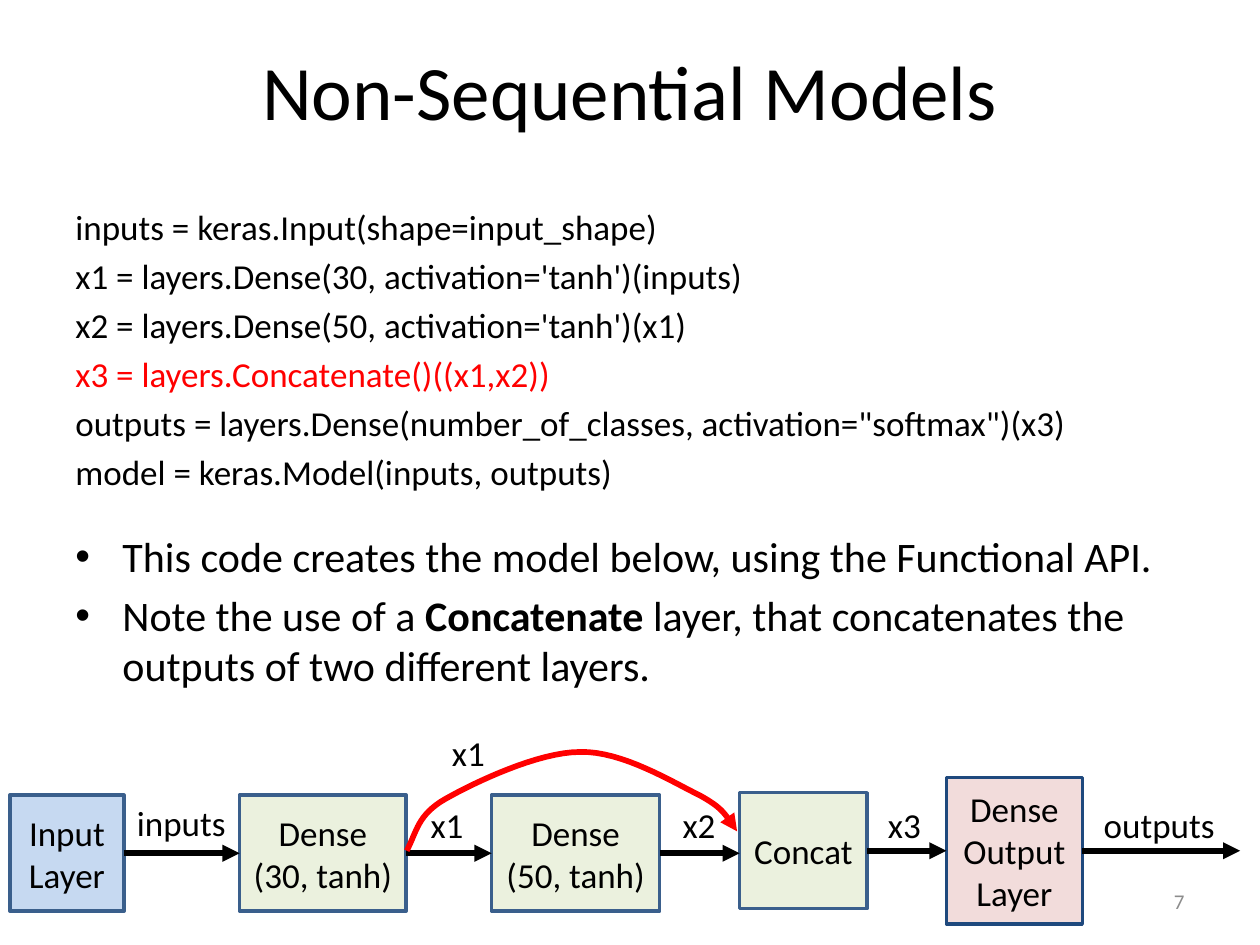
"""Builds the slide on non-sequential models: code, two bullets and a layer diagram."""
from lxml import etree
from pptx import Presentation
from pptx.dml.color import RGBColor
from pptx.enum.shapes import MSO_CONNECTOR, MSO_SHAPE
from pptx.enum.text import MSO_ANCHOR, PP_ALIGN
from pptx.oxml.ns import qn
from pptx.util import Cm, Pt

LEFT, CENTER, RIGHT = PP_ALIGN.LEFT, PP_ALIGN.CENTER, PP_ALIGN.RIGHT
TOP, MIDDLE = MSO_ANCHOR.TOP, MSO_ANCHOR.MIDDLE
STRAIGHT, RECTANGLE = MSO_CONNECTOR.STRAIGHT, MSO_SHAPE.RECTANGLE
BLACK = RGBColor(0x00, 0x00, 0x00)
RED = RGBColor(0xFF, 0x00, 0x00)
GRAY = RGBColor(0x8C, 0x8C, 0x8C)
BLUE = RGBColor(0xC6, 0xD9, 0xF1)
GREEN = RGBColor(0xEB, 0xF1, 0xDE)
PINK = RGBColor(0xF2, 0xDC, 0xDB)
STEEL = RGBColor(0x3A, 0x5F, 0x8C)
NAVY = RGBColor(0x1F, 0x49, 0x7D)


def write(sp, lines, size, align=LEFT, anchor=TOP, wrap=True, color=BLACK):
    tf = sp.text_frame
    tf.word_wrap = wrap
    tf.vertical_anchor = anchor
    tf.text = "\n".join(lines)
    for p in tf.paragraphs:
        p.alignment = align
        p.font.name = "Calibri"
        p.font.size = Pt(size)
        p.font.color.rgb = color
    return tf


def style_arrow(sp, color):
    sp.line.color.rgb = color
    sp.line.width = Pt(3.25)
    etree.SubElement(sp.line._get_or_add_ln(), qn("a:tailEnd"), type="triangle")


prs = Presentation()
prs.slide_width, prs.slide_height = Cm(25.4), Cm(19.05)
s = prs.slides.add_slide(prs.slide_layouts[6])

title = s.shapes.add_textbox(Cm(1.27), Cm(0.43), Cm(22.86), Cm(2.74))
write(title, ["Non-Sequential Models"], 44, CENTER, MIDDLE)

code = [
    "inputs = keras.Input(shape=input_shape)",
    "x1 = layers.Dense(30, activation='tanh')(inputs)",
    "x2 = layers.Dense(50, activation='tanh')(x1)",
    "x3 = layers.Concatenate()((x1,x2))",
    'outputs = layers.Dense(number_of_classes, activation="softmax")(x3)',
    "model = keras.Model(inputs, outputs)",
]
bullets = [
    [("This code creates the model below, using the Functional API.", False)],
    [("Note the use of a ", False), ("Concatenate ", True),
     ("layer, that concatenates the outputs of two different layers.", False)],
]
body = s.shapes.add_textbox(Cm(1.27), Cm(4.01), Cm(23.29), Cm(13.54))
tf = write(body, code, 20)
for p in tf.paragraphs:
    p.space_before = Pt(4)
tf.paragraphs[3].font.color.rgb = RED
for runs, gap in zip(bullets, (22, 4.8)):
    p = tf.add_paragraph()
    p.space_before = Pt(gap)
    p.font.name = "Calibri"
    p.font.size = Pt(24)
    p.font.color.rgb = BLACK
    for text, bold in runs:
        r = p.add_run()
        r.text = text
        r.font.bold = bold
    pPr = p._p.get_or_add_pPr()
    pPr.set("marL", str(Cm(0.95)))
    pPr.set("indent", str(-Cm(0.95)))
    bullet_font = etree.Element(qn("a:buFont"), typeface="Arial")
    bullet_char = etree.Element(qn("a:buChar"), char="•")
    at = pPr.index(pPr.find(qn("a:defRPr")))
    pPr.insert(at, bullet_font)
    pPr.insert(at + 1, bullet_char)

number = s.shapes.add_textbox(Cm(18.2), Cm(17.66), Cm(5.93), Cm(1.01))
write(number, ["7"], 12, RIGHT, MIDDLE, color=GRAY)

boxes = []
for lines, x, y, w, h, fill, edge in [
    (["Input Layer"], 0.2, 16.03, 2.3, 2.34, BLUE, STEEL),
    (["Dense (30, tanh)"], 4.83, 16.03, 3.36, 2.34, GREEN, STEEL),
    (["Dense (50, tanh)"], 9.91, 16.03, 3.39, 2.34, GREEN, STEEL),
    (["Concat"], 14.91, 15.98, 2.57, 2.34, GREEN, STEEL),
    (["Dense", "Output Layer"], 19.08, 15.67, 2.74, 2.96, PINK, NAVY),
]:
    sp = s.shapes.add_shape(RECTANGLE, Cm(x), Cm(y), Cm(w), Cm(h))
    sp.shadow.inherit = False
    sp.fill.solid()
    sp.fill.fore_color.rgb = fill
    sp.line.color.rgb = edge
    sp.line.width = Pt(2)
    write(sp, lines, 20, CENTER, MIDDLE)
    boxes.append(sp)

for i, box in enumerate(boxes):
    y = box.top + box.height // 2
    target = boxes[i + 1] if i + 1 < len(boxes) else None
    end_x = target.left if target else Cm(25)
    arrow = s.shapes.add_connector(STRAIGHT, box.left + box.width, y, end_x, y)
    arrow.begin_connect(box, 3)
    if target and abs(target.top + target.height // 2 - y) < Cm(0.02):
        arrow.end_connect(target, 1)
    style_arrow(arrow, BLACK)
    etree.SubElement(arrow._element.spPr, qn("a:effectLst"))

for text, x, y, w in [
    ("inputs", 2.51, 16.03, 2.31),
    ("x1", 8.43, 16.08, 1.17),
    ("x2", 13.51, 16.08, 1.17),
    ("x3", 17.65, 16.08, 1.17),
    ("outputs", 22, 16.08, 2.77),
    ("x1", 8.86, 14.63, 1.17),
]:
    label = s.shapes.add_textbox(Cm(x), Cm(y), Cm(w), Cm(1.11))
    write(label, [text], 20, wrap=text == "outputs")

start = (8.2, 17.15)
curves = [
    ((8.41, 16.76), (8.41, 16.43), (8.99, 16.1)),
    ((9.58, 15.77), (10.85, 15.16), (11.7, 15.16)),
    ((12.55, 15.14), (13.56, 15.77), (14.1, 16.03)),
    ((14.6, 16.31), (14.6, 16.4), (14.86, 16.76)),
]
steps = 16
points = [start]
for c1, c2, end in curves:
    begin = points[-1]
    for n in range(1, steps + 1):
        t = n / steps
        points.append(tuple(
            (1 - t) ** 3 * a + 3 * (1 - t) ** 2 * t * b + 3 * (1 - t) * t ** 2 * c + t ** 3 * d
            for a, b, c, d in zip(begin, c1, c2, end)))
builder = s.shapes.build_freeform(Cm(start[0]), Cm(start[1]))
builder.add_line_segments([(Cm(x), Cm(y)) for x, y in points[1:]], close=False)
skip = builder.convert_to_shape()
skip.shadow.inherit = False
skip.fill.background()
style_arrow(skip, RED)

prs.save("out.pptx")
